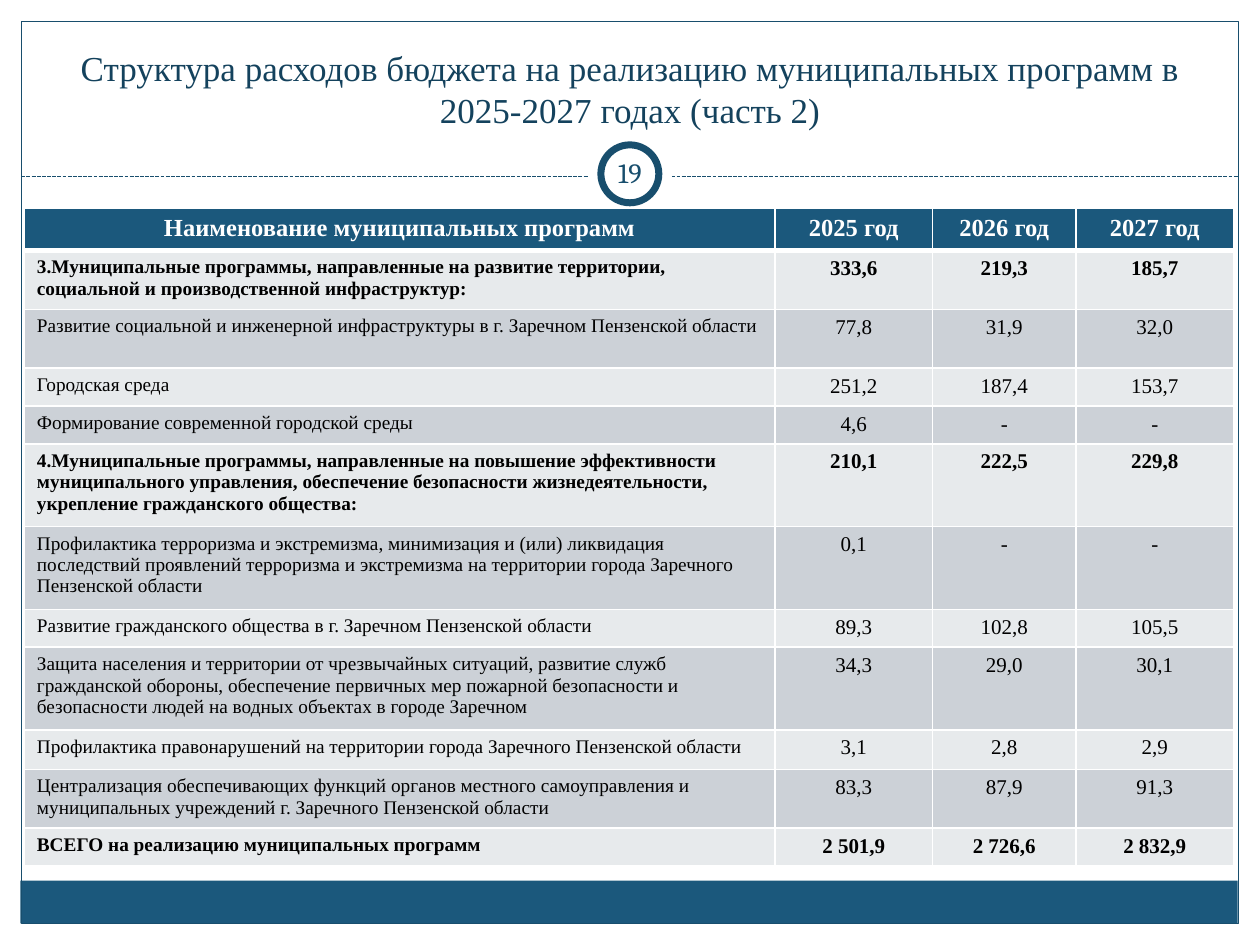
"""Build the slide on municipal programme spending for 2025-2027."""
from typing import NamedTuple

from lxml.etree import SubElement
from pptx import Presentation
from pptx.dml.color import RGBColor
from pptx.enum.dml import MSO_LINE
from pptx.enum.shapes import MSO_CONNECTOR, MSO_SHAPE
from pptx.enum.text import MSO_ANCHOR, MSO_AUTO_SIZE, PP_ALIGN
from pptx.oxml import parse_xml
from pptx.oxml.ns import nsdecls, qn
from pptx.util import Pt

WHITE = RGBColor(0xFF, 0xFF, 0xFF)
BLACK = RGBColor(0x00, 0x00, 0x00)
BLUE = RGBColor(0x1B, 0x58, 0x7C)
LINE_BLUE = RGBColor(0x18, 0x4E, 0x6D)
TITLE_BLUE = RGBColor(0x14, 0x42, 0x5D)
LIGHT_BAND = RGBColor(0xE7, 0xEA, 0xEC)
DARK_BAND = RGBColor(0xCC, 0xD1, 0xD7)
SERIF = "Times New Roman"
COLUMN_WIDTHS = (429, 90, 82, 90)
HEADINGS = ("Наименование муниципальных программ", "2025 год", "2026 год", "2027 год")
HEADER_HEIGHT = 22.2
ONE_LINE, TALL_LINE, TWO_LINES, THREE_LINES = 20.4, 22.5, 33.7, 47.3


class Box(NamedTuple):
    left: float
    top: float
    width: float
    height: float


class Decoration(NamedTuple):
    kind: MSO_SHAPE
    box: Box
    fill: RGBColor | None = None
    line_width: float = 0


class Programme(NamedTuple):
    name: str
    amounts: tuple[str, str, str]
    height: float
    bold: bool = False


class Style(NamedTuple):
    size: float
    color: RGBColor
    font: str = SERIF
    bold: bool = False
    align: PP_ALIGN = PP_ALIGN.CENTER


FRAME = Box(12.2, 12.2, 695.5, 515.5)
DIVIDER_TOP = 100.8
FOOTER_BAR = Decoration(MSO_SHAPE.RECTANGLE, Box(11.7, 503.2, 695.5, 24.5), BLUE)
BORDER = Decoration(MSO_SHAPE.RECTANGLE, FRAME, None, 0.75)
NUMBER_GAP = Decoration(MSO_SHAPE.OVAL, Box(336, 75.6, 48, 48), WHITE)
NUMBER_RING = Decoration(MSO_SHAPE.OVAL, Box(343.4, 82.8, 33.1, 33.1), WHITE, 4)

PROGRAMMES = (
    Programme("3.Муниципальные программы, направленные на развитие территории, "
              "социальной и производственной инфраструктур:",
              ("333,6", "219,3", "185,7"), TWO_LINES, True),
    Programme("Развитие социальной и инженерной инфраструктуры в г. Заречном "
              "Пензенской области", ("77,8", "31,9", "32,0"), TWO_LINES),
    Programme("Городская среда", ("251,2", "187,4", "153,7"), ONE_LINE),
    Programme("Формирование современной городской среды", ("4,6", "-", "-"), ONE_LINE),
    Programme("4.Муниципальные программы, направленные на повышение эффективности "
              "муниципального управления, обеспечение безопасности жизнедеятельности, "
              "укрепление гражданского общества:",
              ("210,1", "222,5", "229,8"), THREE_LINES, True),
    Programme("Профилактика терроризма и экстремизма, минимизация и (или) ликвидация "
              "последствий проявлений терроризма и экстремизма на территории города "
              "Заречного Пензенской области", ("0,1", "-", "-"), THREE_LINES),
    Programme("Развитие гражданского общества в г. Заречном Пензенской области",
              ("89,3", "102,8", "105,5"), ONE_LINE),
    Programme("Защита населения и территории от чрезвычайных ситуаций, развитие служб "
              "гражданской обороны, обеспечение первичных мер пожарной безопасности и "
              "безопасности людей на водных объектах в городе Заречном",
              ("34,3", "29,0", "30,1"), THREE_LINES),
    Programme("Профилактика правонарушений на территории города Заречного Пензенской "
              "области", ("3,1", "2,8", "2,9"), TALL_LINE),
    Programme("Централизация обеспечивающих функций органов местного самоуправления и "
              "муниципальных учреждений г. Заречного Пензенской области",
              ("83,3", "87,9", "91,3"), TWO_LINES),
    Programme("ВСЕГО на реализацию муниципальных программ",
              ("2 501,9", "2 726,6", "2 832,9"), ONE_LINE, True),
)


def points(box: Box) -> tuple[Pt, ...]:
    return tuple(Pt(length) for length in box)


def write(frame, text: str, style: Style) -> None:
    para = frame.paragraphs[0]
    para.alignment = style.align
    span = para.add_run()
    span.text = text
    span.font.size = Pt(style.size)
    span.font.name = style.font
    span.font.bold = style.bold
    span.font.color.rgb = style.color


def draw_decoration(page, item: Decoration) -> None:
    shape = page.shapes.add_shape(item.kind, *points(item.box))
    shape.shadow.inherit = False
    if item.fill is None:
        shape.fill.background()
    else:
        shape.fill.solid()
        shape.fill.fore_color.rgb = item.fill
    if item.line_width:
        shape.line.color.rgb = LINE_BLUE
        shape.line.width = Pt(item.line_width)
    else:
        shape.line.fill.background()


def draw_divider(page) -> None:
    top = Pt(DIVIDER_TOP)
    divider = page.shapes.add_connector(
        MSO_CONNECTOR.STRAIGHT, Pt(FRAME.left), top, Pt(FRAME.left + FRAME.width), top)
    divider.line.color.rgb = LINE_BLUE
    divider.line.width = Pt(0.75)
    divider.line.dash_style = MSO_LINE.SQUARE_DOT
    SubElement(divider.element.spPr, qn("a:effectLst"))


def draw_title(page, text: str) -> None:
    title = page.shapes.title
    title.left, title.top, title.width, title.height = points(Box(24, 18, 672, 60))
    title.text_frame.auto_size = MSO_AUTO_SIZE.NONE
    title.text_frame.vertical_anchor = MSO_ANCHOR.BOTTOM
    write(title.text_frame, text, Style(20, TITLE_BLUE))


def draw_number(page, text: str) -> None:
    frame = page.shapes.add_textbox(*points(Box(342, 81.4, 36, 34.6))).text_frame
    frame.word_wrap = True
    frame.vertical_anchor = MSO_ANCHOR.MIDDLE
    frame.margin_left = frame.margin_right = Pt(3.6)
    frame.margin_top = frame.margin_bottom = Pt(3.6)
    write(frame, text, Style(16, LINE_BLUE, "Cambria"))


def fill_cell(cell, text: str, style: Style, fill: RGBColor,
              top: float = 1, bottom: float = 1) -> None:
    write(cell.text_frame, text, style)
    cell.fill.solid()
    cell.fill.fore_color.rgb = fill
    properties = cell._tc.get_or_add_tcPr()
    for index, (side, width) in enumerate(zip("LRTB", (1, 1, top, bottom))):
        properties.insert(index, parse_xml(
            f'<a:ln{side} {nsdecls("a")} w="{Pt(width)}"><a:solidFill>'
            f'<a:srgbClr val="{WHITE}"/></a:solidFill></a:ln{side}>'))


def draw_table(page) -> None:
    heights = (HEADER_HEIGHT, *(programme.height for programme in PROGRAMMES))
    box = Box(13.9, 119, sum(COLUMN_WIDTHS), sum(heights))
    table = page.shapes.add_table(len(heights), len(COLUMN_WIDTHS), *points(box)).table
    for column, width in zip(table.columns, COLUMN_WIDTHS):
        column.width = Pt(width)
    for row, height in zip(table.rows, heights):
        row.height = Pt(height)
    for cell, heading in zip(table.rows[0].cells, HEADINGS):
        fill_cell(cell, heading, Style(14, WHITE, bold=True), BLUE, bottom=3)
    for number, programme in enumerate(PROGRAMMES, 1):
        fill = LIGHT_BAND if number % 2 else DARK_BAND
        top = 3 if number == 1 else 1
        name_cell, *amount_cells = table.rows[number].cells
        name_style = Style(11, BLACK, bold=programme.bold, align=PP_ALIGN.LEFT)
        fill_cell(name_cell, programme.name, name_style, fill, top)
        for cell, amount in zip(amount_cells, programme.amounts):
            fill_cell(cell, amount, Style(12, BLACK, bold=programme.bold), fill, top)


def main() -> None:
    deck = Presentation()
    deck.slide_width, deck.slide_height = Pt(720), Pt(540)
    page = deck.slides.add_slide(deck.slide_layouts[5])
    draw_decoration(page, FOOTER_BAR)
    draw_decoration(page, BORDER)
    draw_divider(page)
    draw_decoration(page, NUMBER_GAP)
    draw_decoration(page, NUMBER_RING)
    draw_title(page, "Структура расходов бюджета на реализацию муниципальных "
                     "программ в 2025-2027 годах (часть 2)")
    draw_number(page, "19")
    draw_table(page)
    deck.save("out.pptx")


if __name__ == "__main__":
    main()
